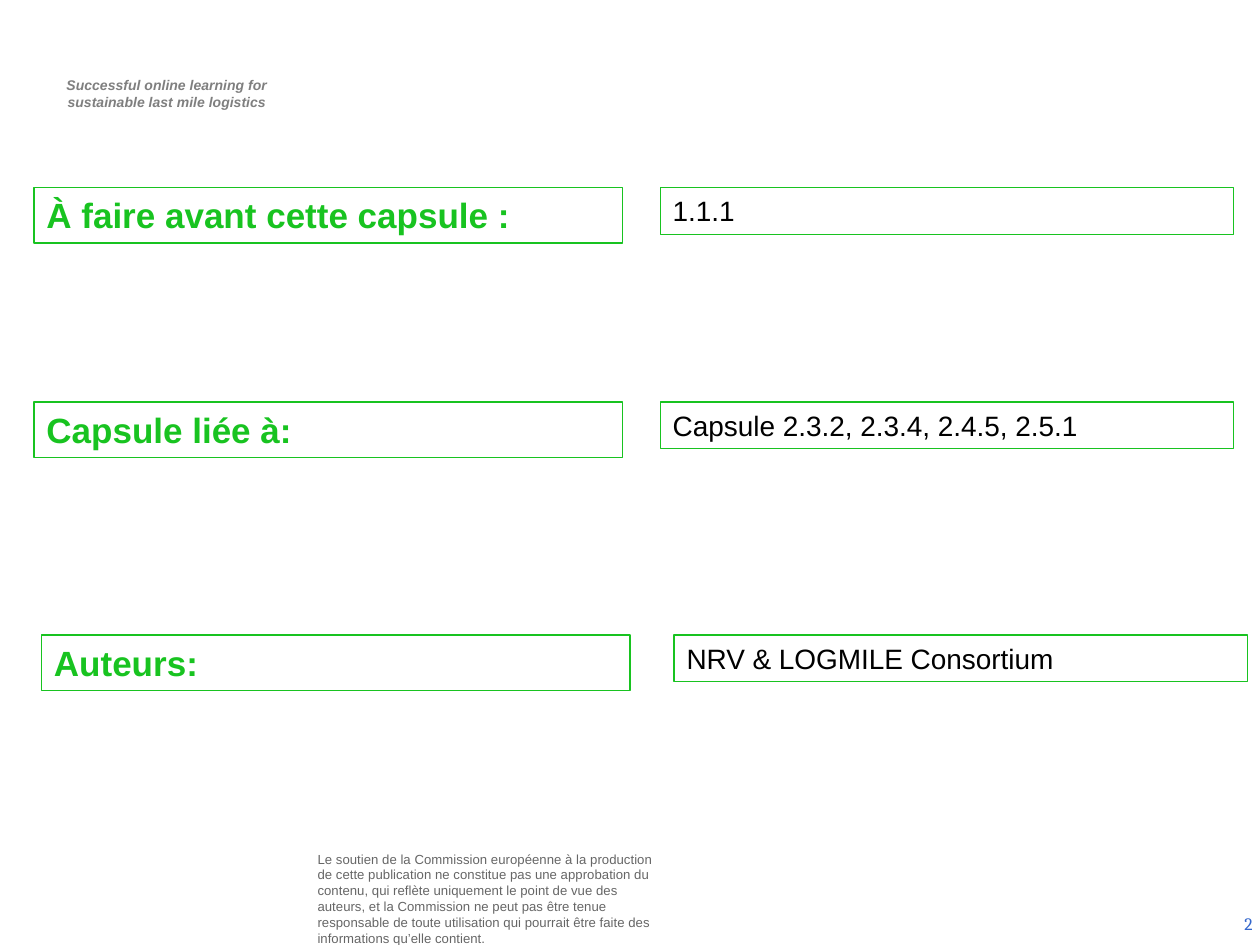
from pptx import Presentation
from pptx.dml.color import RGBColor
from pptx.enum.shapes import MSO_SHAPE
from pptx.enum.text import MSO_ANCHOR, PP_ALIGN
from pptx.util import Inches, Pt

GREEN = "18C320"


def paint(code):
    """Return the colour for a hex string."""
    return RGBColor.from_string(code)


def style(item, values):
    """Set each attribute in a dict of format values."""
    for name, value in values.items():
        setattr(item, name, value)


def write(shape, lines, form, color, align=PP_ALIGN.LEFT,
          anchor=MSO_ANCHOR.TOP, pad=(0.1, 0.05), indent=0):
    """Fill a shape with formatted lines of text."""
    frame = shape.text_frame
    side, edge = Inches(pad[0]), Inches(pad[1])
    style(frame, {"word_wrap": True, "vertical_anchor": anchor,
                  "margin_left": side, "margin_right": side,
                  "margin_top": edge, "margin_bottom": edge})
    frame.text = "\n".join(lines)
    for para in frame.paragraphs:
        para.alignment = align
        if indent:
            para._p.get_or_add_pPr().set("marL", str(Inches(indent)))
        for run in para.runs:
            style(run.font, form)
            run.font.color.rgb = paint(color)


def label(slide, box, lines, form, color, **more):
    """Place a plain text box."""
    shape = slide.shapes.add_textbox(*map(Inches, box))
    write(shape, lines, form, color, **more)


def panel(slide, box, text, form, color):
    """Place a white box with a green outline."""
    shape = slide.shapes.add_shape(MSO_SHAPE.RECTANGLE, *map(Inches, box))
    shape.shadow.inherit = False
    shape.fill.solid()
    shape.fill.fore_color.rgb = paint("FFFFFF")
    shape.line.color.rgb = paint(GREEN)
    shape.line.width = Pt(0.75)
    write(shape, [text], form, color)


def row(slide, left, right, top, head, body):
    """Place a heading panel and its answer panel side by side."""
    panel(slide, (left, top, 4.67, 0.44), head,
          {"name": "Arial", "size": Pt(20), "bold": True}, GREEN)
    panel(slide, (right, top, 4.55, 0.37), body,
          {"name": "Arial", "size": Pt(16)}, "000000")


def frame(slide):
    """Place the motto, the disclaimer and the page number."""
    label(slide, (0.29, 0.56, 2.03, 0.37),
          ["Successful online learning for", "sustainable last mile logistics"],
          {"name": "Arial", "size": Pt(8), "bold": True, "italic": True},
          "7F7F7F", align=PP_ALIGN.CENTER, indent=0.04)
    label(slide, (2.48, 6.88, 2.81, 0.5),
          ["Le soutien de la Commission européenne à la production de cette "
           "publication ne constitue pas une approbation du contenu, qui "
           "reflète uniquement le point de vue des auteurs, et la Commission "
           "ne peut pas être tenue responsable de toute utilisation qui "
           "pourrait être faite des informations qu’elle contient."],
          {"name": "Arial", "size": Pt(7.5)}, "666666",
          anchor=MSO_ANCHOR.MIDDLE, pad=(0.04, 0.04))
    label(slide, (7.71, 7.13, 2.33, 0.4), ["2"],
          {"name": "Cambria", "size": Pt(10)}, "3366CC",
          align=PP_ALIGN.RIGHT, anchor=MSO_ANCHOR.MIDDLE)


def main():
    """Build and save the slide."""
    deck = Presentation()
    style(deck, {"slide_width": Inches(10), "slide_height": Inches(7.5)})
    slide = deck.slides.add_slide(deck.slide_layouts[6])
    frame(slide)
    for item in (
        (0.27, 5.24, 1.49, "À faire avant cette capsule :", "1.1.1"),
        (0.27, 5.24, 3.19, "Capsule liée à:",
         "Capsule 2.3.2, 2.3.4, 2.4.5, 2.5.1"),
        (0.33, 5.35, 5.04, "Auteurs:", "NRV & LOGMILE Consortium"),
    ):
        row(slide, *item)
    deck.save("out.pptx")


if __name__ == "__main__":
    main()
